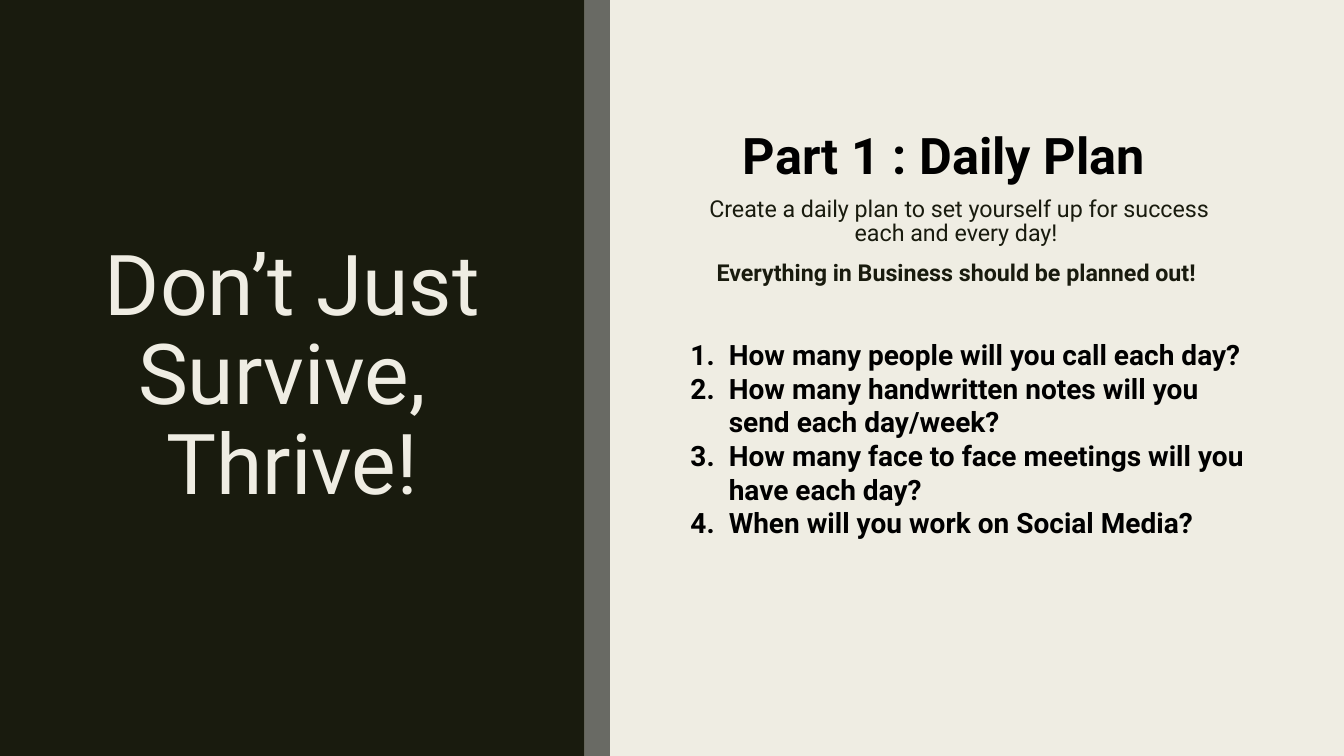
from dataclasses import dataclass

from lxml import etree
from pptx import Presentation
from pptx.dml.color import RGBColor
from pptx.enum.shapes import MSO_SHAPE
from pptx.enum.text import MSO_ANCHOR, PP_ALIGN
from pptx.oxml.ns import qn
from pptx.slide import Slide
from pptx.util import Inches, Pt

RECTANGLE = MSO_SHAPE.RECTANGLE
TOP, MIDDLE = MSO_ANCHOR.TOP, MSO_ANCHOR.MIDDLE
LEFT, CENTER = PP_ALIGN.LEFT, PP_ALIGN.CENTER


@dataclass(frozen=True)
class Theme:
    font: str = "Roboto"
    cream: str = "EFEDE3"
    olive: str = "191B0E"
    gray: str = "696A64"
    black: str = "000000"
    title_size: float = 60
    heading_size: float = 36
    question_size: float = 20
    intro_size: float = 16.6


@dataclass(frozen=True)
class Box:
    left: float
    top: float
    width: float
    height: float

    def lengths(self) -> tuple[Inches, Inches, Inches, Inches]:
        return Inches(self.left), Inches(self.top), Inches(self.width), Inches(self.height)


@dataclass(frozen=True)
class Panel:
    box: Box
    color: str


@dataclass(frozen=True)
class Line:
    text: str
    bold: bool = False


@dataclass(frozen=True)
class TextBlock:
    box: Box
    lines: tuple[Line, ...]
    size: float
    color: str
    anchor: MSO_ANCHOR = TOP
    alignment: PP_ALIGN = CENTER
    line_spacing: float = 1.0
    space_before: float = 0
    space_after: float = 0
    numbered: bool = False


THEME = Theme()
SLIDE_WIDTH, SLIDE_HEIGHT = 13.33, 7.5
PANEL_WIDTH, STRIPE_WIDTH = 5.8, 0.25
TEXT_LEFT = 6.75
NUMBER_INDENT = 0.38

PANELS = (
    Panel(Box(0, 0, PANEL_WIDTH, SLIDE_HEIGHT), THEME.olive),
    Panel(Box(PANEL_WIDTH, 0, STRIPE_WIDTH, SLIDE_HEIGHT), THEME.gray),
)

TEXT_BLOCKS = (
    TextBlock(
        Box(0.7, 0.87, 4.4, 5.76),
        (Line("Don’t Just Survive, \vThrive!"),),
        THEME.title_size, THEME.cream, anchor=MIDDLE, line_spacing=0.89,
    ),
    TextBlock(
        Box(TEXT_LEFT, 1.89, 5.52, 1.03),
        (
            Line("Create a daily plan to set yourself up for success each and every day! "),
            Line("Everything in Business should be planned out! ", bold=True),
        ),
        THEME.intro_size, THEME.olive, anchor=MIDDLE,
        line_spacing=0.84, space_before=10, space_after=2,
    ),
    TextBlock(
        Box(TEXT_LEFT, 1.18, 5.35, 0.71),
        (Line("Part 1 : Daily Plan ", bold=True),),
        THEME.heading_size, THEME.black,
    ),
    TextBlock(
        Box(TEXT_LEFT, 3.3, 5.74, 3.37),
        (
            Line("How many people will you call each day?", bold=True),
            Line("How many handwritten notes will you send each day/week?", bold=True),
            Line("How many face to face meetings will you have each day?", bold=True),
            Line("When will you work on Social Media?", bold=True),
        ),
        THEME.question_size, THEME.black, alignment=LEFT, numbered=True,
    ),
)


def draw_panel(slide: Slide, panel: Panel) -> None:
    shape = slide.shapes.add_shape(RECTANGLE, *panel.box.lengths())
    shape.shadow.inherit = False
    shape.fill.solid()
    shape.fill.fore_color.rgb = RGBColor.from_string(panel.color)
    shape.line.fill.background()


def number_paragraph(paragraph) -> None:
    """Give the paragraph an automatic number with a hanging indent."""
    properties = paragraph._p.get_or_add_pPr()
    properties.set("marL", str(Inches(NUMBER_INDENT)))
    properties.set("indent", str(-Inches(NUMBER_INDENT)))
    etree.SubElement(properties, qn("a:buFont"), typeface="+mj-lt")
    etree.SubElement(properties, qn("a:buAutoNum"), type="arabicPeriod")


def draw_text(slide: Slide, block: TextBlock) -> None:
    text_frame = slide.shapes.add_textbox(*block.box.lengths()).text_frame
    text_frame.word_wrap = True
    text_frame.vertical_anchor = block.anchor
    text_frame.text = "\n".join(line.text for line in block.lines)
    for paragraph, line in zip(text_frame.paragraphs, block.lines):
        paragraph.alignment = block.alignment
        paragraph.line_spacing = block.line_spacing
        paragraph.space_before = Pt(block.space_before)
        paragraph.space_after = Pt(block.space_after)
        if block.numbered:
            number_paragraph(paragraph)
        for run in paragraph.runs:
            run.font.name = THEME.font
            run.font.size = Pt(block.size)
            run.font.bold = line.bold
            run.font.color.rgb = RGBColor.from_string(block.color)


def main() -> None:
    presentation = Presentation()
    presentation.slide_width = Inches(SLIDE_WIDTH)
    presentation.slide_height = Inches(SLIDE_HEIGHT)
    slide = presentation.slides.add_slide(presentation.slide_layouts[6])
    slide.background.fill.solid()
    slide.background.fill.fore_color.rgb = RGBColor.from_string(THEME.cream)
    for panel in PANELS:
        draw_panel(slide, panel)
    for block in TEXT_BLOCKS:
        draw_text(slide, block)
    presentation.save("out.pptx")


if __name__ == "__main__":
    main()
